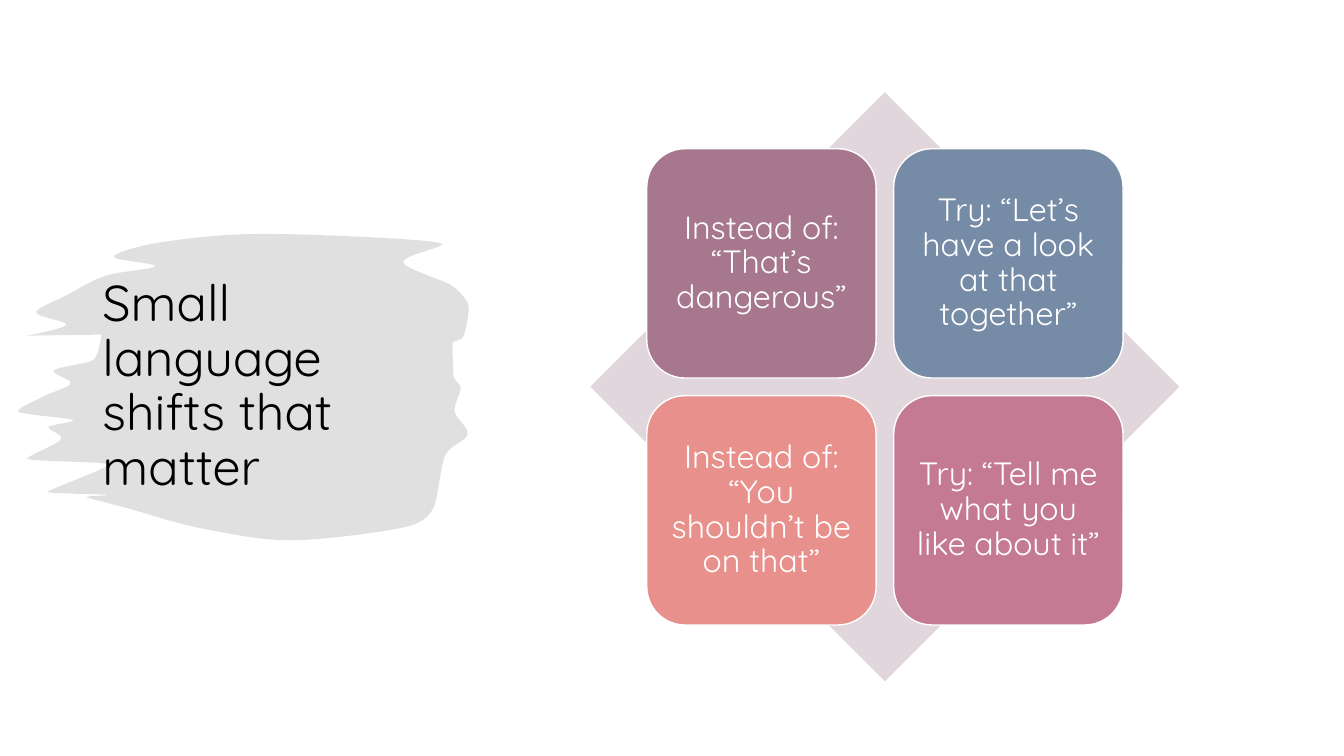
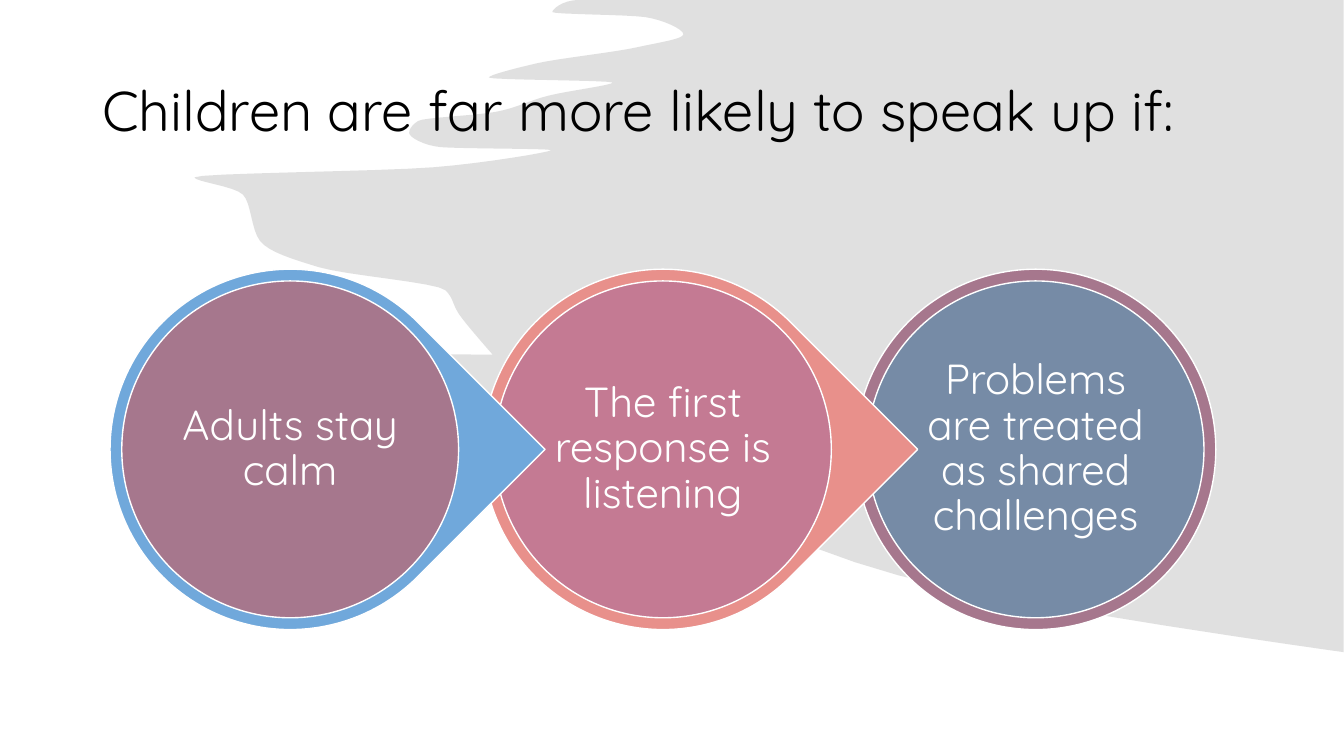
from lxml.etree import SubElement
from pptx import Presentation
from pptx.dml.color import RGBColor
from pptx.enum.shapes import MSO_SHAPE
from pptx.enum.text import MSO_ANCHOR, MSO_AUTO_SIZE, PP_ALIGN
from pptx.oxml.ns import qn
from pptx.util import Emu, Inches, Pt

# The slide is a grid of 160 columns by 90 rows of square cells
COLUMNS, ROWS = 160, 90
CELL = Inches(7.5) / ROWS

FONT = "Quicksand"
BLACK = RGBColor(0x00, 0x00, 0x00)
WHITE = RGBColor(0xFF, 0xFF, 0xFF)
BRUSH_GREY = RGBColor(0xD9, 0xD9, 0xD9)
PALE_MAUVE = RGBColor(0xE1, 0xD6, 0xDB)
PLUM = RGBColor(0xA6, 0x77, 0x8D)
SLATE = RGBColor(0x76, 0x8B, 0xA6)
CORAL = RGBColor(0xE8, 0x90, 0x8B)
ROSE = RGBColor(0xC4, 0x7A, 0x93)
SKY = RGBColor(0x70, 0xA8, 0xDB)

TITLE_FRAME = {"word_wrap": True, "auto_size": MSO_AUTO_SIZE.NONE,
               "vertical_anchor": MSO_ANCHOR.MIDDLE}
TITLE_PARAGRAPH = {"alignment": PP_ALIGN.LEFT, "line_spacing": 0.9}
LABEL_FRAME = {"word_wrap": True, "vertical_anchor": MSO_ANCHOR.MIDDLE}
LABEL_PARAGRAPH = {"alignment": PP_ALIGN.CENTER, "line_spacing": 0.9}
MARGINS = ("margin_left", "margin_top", "margin_right", "margin_bottom")

TILES = [
    ("Instead of: “That’s dangerous”", PLUM),
    ("Try: “Let’s have a look at that together”", SLATE),
    ("Instead of: “You shouldn’t be on that”", CORAL),
    ("Try: “Tell me what you like about it”", ROSE),
]
STEPS = [
    ("Adults stay calm", SKY, PLUM),
    ("The first response is listening", CORAL, ROSE),
    ("Problems are treated as shared challenges", PLUM, SLATE),
]

# Turning points of the brush strokes, in inches
SMALL_BRUSH = [
    (2.6, 2.32), (4.39, 2.42), (4, 2.6), (4.52, 2.86), (4.65, 3.06), (4.59, 3.35),
    (4.49, 3.41), (4.5, 3.73), (4.57, 3.85), (4.51, 4.07), (4.64, 4.3), (4.42, 4.51),
    (4.3, 5.04), (4.12, 5.2), (2.89, 5.36), (2.04, 5.25), (1.26, 5.04), (0.86, 4.93),
    (1.07, 4.91), (0.47, 4.88), (1.08, 4.61), (0.27, 4.55), (0.61, 4.35), (0.48, 4.24),
    (0.73, 4.17), (0.18, 4.08), (0.44, 3.93), (0.7, 3.8), (0.53, 3.68), (0.94, 3.56),
    (1.01, 3.32), (0.27, 3.33), (0.66, 3.22), (0.36, 3.1), (0.66, 2.93), (1.07, 2.73),
    (1.54, 2.64), (1.13, 2.55), (1.41, 2.44),
]
LARGE_BRUSH = [
    (13.33, 0), (5.75, 0), (5.48, 0.12), (6.4, 0.17), (6.78, 0.34), (6.32, 0.47),
    (5.32, 0.63), (4.85, 0.77), (6.08, 0.82), (5.44, 0.95), (4.92, 1.11), (4.15, 1.2),
    (4.06, 1.32), (4.37, 1.46), (5.47, 1.49), (4.3, 1.66), (1.93, 1.76), (2.41, 1.93),
    (2.58, 2.39), (3.16, 2.65), (4.42, 2.88), (4.55, 3.11), (4.89, 3.52), (3.09, 3.5),
    (5.12, 4.02), (6.05, 4.5), (8.92, 5.71), (13.33, 6.47),
]


def cells(count):
    return Emu(round(count * CELL))


def set_attributes(target, values):
    for name, value in values.items():
        setattr(target, name, value)


def write_text(shape, text, size, color, frame_format, paragraph_format):
    frame = shape.text_frame
    frame.text = text
    set_attributes(frame, frame_format)
    paragraph = frame.paragraphs[0]
    set_attributes(paragraph, paragraph_format)
    set_attributes(paragraph.font, {"name": FONT, "size": Pt(size)})
    paragraph.font.color.rgb = color


def paint(shape, fill, line=None):
    shape.shadow.inherit = False
    shape.fill.solid()
    shape.fill.fore_color.rgb = fill
    if line is None:
        shape.line.fill.background()
    else:
        shape.line.color.rgb = line
        shape.line.width = Pt(1)


def add_preset(slide, kind, left, top, size, fill, line=None):
    """Add a square preset shape, measured in grid cells."""
    shape = slide.shapes.add_shape(kind, *map(cells, (left, top, size, size)))
    paint(shape, fill, line)
    return shape


def add_label(shape, text, size, margin):
    frame_format = LABEL_FRAME | dict.fromkeys(MARGINS, Inches(margin))
    write_text(shape, text, size, WHITE, frame_format, LABEL_PARAGRAPH)


def tangent(before, here, after):
    """Harmonic mean of the two steps, or none where the direction turns."""
    first, second = here - before, after - here
    return 2 * first * second / (first + second) if first * second > 0 else 0


def smooth_outline(points, samples=8):
    """Round a closed outline without overshooting its turning points."""
    count = len(points)
    outline = []
    for index in range(count):
        corners = [points[(index + offset) % count] for offset in (-1, 0, 1, 2)]
        for sample in range(samples):
            t = sample / samples
            ease = t * t * (3 - 2 * t)
            outline.append(tuple(
                start + (end - start) * ease
                + tangent(before, start, end) * t * (1 - t) ** 2
                - tangent(start, end, after) * t * t * (1 - t)
                for before, start, end, after in zip(*corners)))
    return outline


def add_brush(slide, turning_points):
    outline = [(Inches(x), Inches(y)) for x, y in smooth_outline(turning_points)]
    builder = slide.shapes.build_freeform(*outline[0])
    builder.add_line_segments(outline[1:], close=True)
    brush = builder.convert_to_shape()
    paint(brush, BRUSH_GREY)
    color = brush._element.spPr.find(qn("a:solidFill"))[0]
    SubElement(color, qn("a:alpha"), val="80000")


def add_slide(presentation, turning_points, title, size, box):
    """Start a slide with a brush stroke behind its title."""
    slide = presentation.slides.add_slide(presentation.slide_layouts[5])
    placeholder = slide.shapes.title
    add_brush(slide, turning_points)
    slide.shapes._spTree.append(placeholder._element)
    set_attributes(placeholder, dict(zip(("left", "top", "width", "height"), map(cells, box))))
    write_text(placeholder, title, size, BLACK, TITLE_FRAME, TITLE_PARAGRAPH)
    return slide


def add_tile_matrix(slide, left, top, size, step):
    for index, (text, color) in enumerate(TILES):
        row, column = divmod(index, 2)
        tile = add_preset(slide, MSO_SHAPE.ROUNDED_RECTANGLE, left + column * step,
                          top + row * step, size, color, WHITE)
        add_label(tile, text, 23, 0.1)


def add_step_chain(slide, left, top, size, step, ring):
    # The last step comes first, so that each pointer overlaps the next step
    last = len(STEPS) - 1
    for index, (text, ring_color, disc_color) in reversed(list(enumerate(STEPS))):
        x = left + index * step
        kind = MSO_SHAPE.OVAL if index == last else MSO_SHAPE.TEAR
        outer = add_preset(slide, kind, x, top, size, ring_color, WHITE)
        if index != last:
            outer.rotation = 45
        disc = add_preset(slide, MSO_SHAPE.OVAL, x + ring, top + ring,
                          size - 2 * ring, disc_color, WHITE)
        add_label(disc, text, 30, 0.04)


def main():
    presentation = Presentation()
    presentation.slide_width = cells(COLUMNS)
    presentation.slide_height = cells(ROWS)

    # Language shifts
    slide = add_slide(presentation, SMALL_BRUSH, "Small language shifts that matter",
                      36, (11, 19.7, 42.2, 52.8))
    add_preset(slide, MSO_SHAPE.DIAMOND, 70.3, 11, 70.1, PALE_MAUVE)
    add_tile_matrix(slide, left=77, top=17.7, size=27.3, step=29.4)

    # Conditions for speaking up
    slide = add_slide(presentation, LARGE_BRUSH, "Children are far more likely to speak up if:",
                      40, (11, 4.8, 138, 17.4))
    add_step_chain(slide, left=13.1, top=32.05, size=42.9, step=44.37, ring=1.4)

    presentation.save("out.pptx")


if __name__ == "__main__":
    main()
